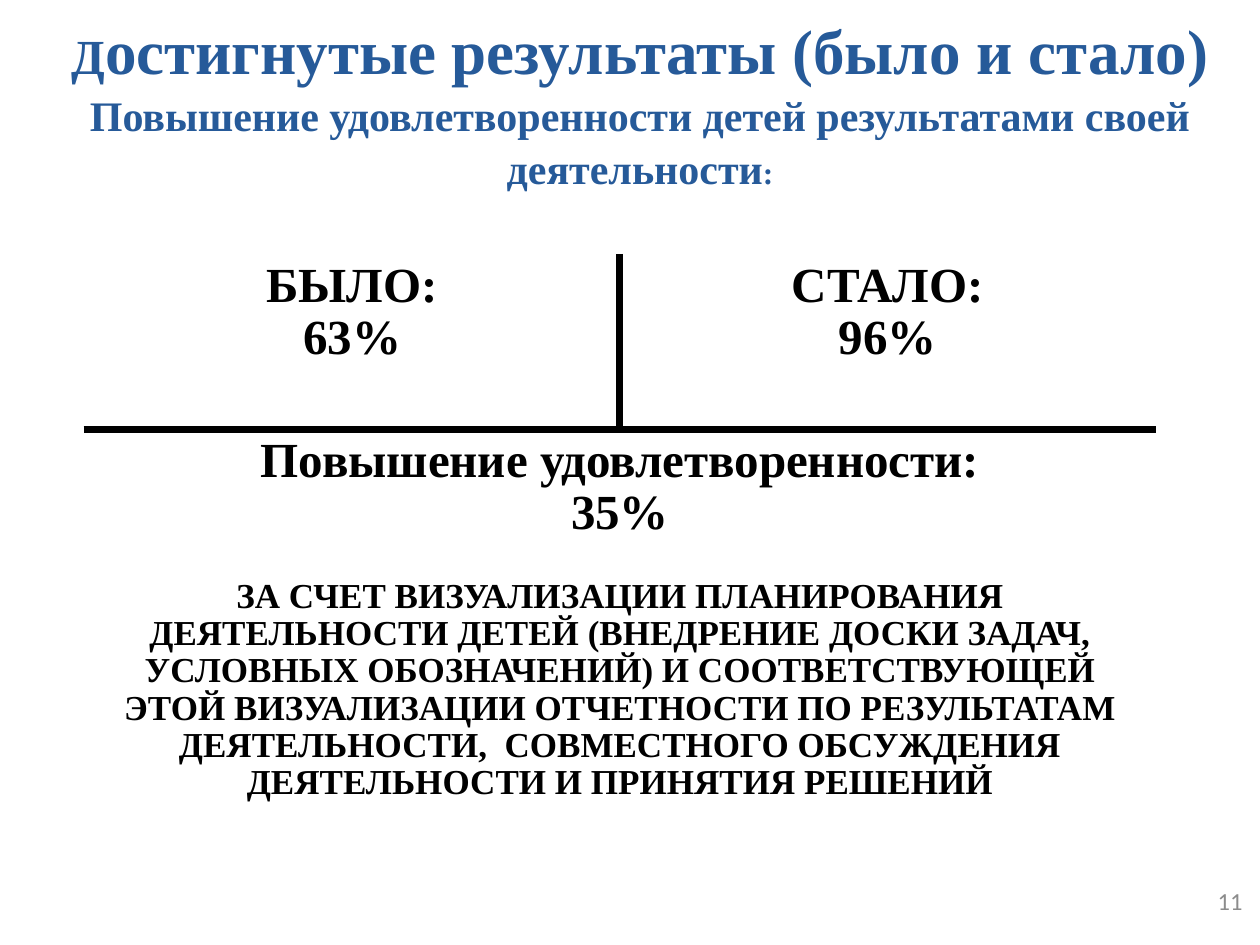
from pptx import Presentation
from pptx.dml.color import RGBColor
from pptx.enum.text import MSO_ANCHOR as ANCHOR, MSO_AUTO_SIZE as AUTOSIZE, PP_ALIGN as ALIGN
from pptx.oxml import parse_xml
from pptx.oxml.ns import nsdecls
from pptx.util import Inches, Pt

BLUE = RGBColor(0x26, 0x5A, 0x99)
BLACK = RGBColor(0, 0, 0)
WHITE = RGBColor(0xFF, 0xFF, 0xFF)
GRAY = RGBColor(0x8C, 0x8C, 0x8C)
SERIF = "Times New Roman"
THICK, THIN = (BLACK, 4.5), (WHITE, 1)

REASON = (
    "ЗА СЧЕТ ВИЗУАЛИЗАЦИИ ПЛАНИРОВАНИЯ ДЕЯТЕЛЬНОСТИ ДЕТЕЙ (ВНЕДРЕНИЕ ДОСКИ ЗАДАЧ, "
    "УСЛОВНЫХ ОБОЗНАЧЕНИЙ) И СООТВЕТСТВУЮЩЕЙ ЭТОЙ ВИЗУАЛИЗАЦИИ ОТЧЕТНОСТИ ПО "
    "РЕЗУЛЬТАТАМ ДЕЯТЕЛЬНОСТИ,  СОВМЕСТНОГО ОБСУЖДЕНИЯ ДЕЯТЕЛЬНОСТИ И ПРИНЯТИЯ РЕШЕНИЙ"
)


def set_font(font, name, size, color, bold=False):
    font.name, font.size, font.bold = name, Pt(size), bold
    font.color.rgb = color


def add_title(s):
    sp = s.shapes.title
    sp.left, sp.top, sp.width, sp.height = map(Inches, (0.35, 0.36, 9.46, 0.87))
    tf = sp.text_frame
    tf.auto_size, tf.vertical_anchor = AUTOSIZE.NONE, ANCHOR.MIDDLE
    p = tf.paragraphs[0]
    p.alignment, p.line_spacing = ALIGN.CENTER, 1.05

    def add_run(text, size):
        r = p.add_run()
        r.text = text
        set_font(r.font, SERIF, size, BLUE, True)

    add_run("Д", 28)
    add_run("остигнутые результаты (было и стало)", 36)
    p.add_line_break()
    add_run("Повышение удовлетворенности детей результатами своей деятельности", 24)
    add_run(":", 18)


def add_slide_number(s, number):
    tf = s.shapes.add_textbox(*map(Inches, (7.63, 6.95, 2.33, 0.4))).text_frame
    tf.word_wrap, tf.vertical_anchor = True, ANCHOR.MIDDLE
    p = tf.paragraphs[0]
    p.text, p.alignment = number, ALIGN.RIGHT
    set_font(p.font, "Calibri", 14, GRAY)


def set_borders(cell, left=THIN, right=THIN, top=THIN, bottom=THIN):
    cell.fill.background()
    tcPr = cell._tc.get_or_add_tcPr()
    for i, (side, (color, width)) in enumerate(zip("LRTB", (left, right, top, bottom))):
        tcPr.insert(i, parse_xml(
            f'<a:ln{side} {nsdecls("a")} w="{Pt(width)}"><a:solidFill>'
            f'<a:srgbClr val="{color}"/></a:solidFill></a:ln{side}>'))


def fill_cell(cell, *lines):
    """Each line is a text, its size and the space before it."""
    tf = cell.text_frame
    for i, (text, size, space) in enumerate(lines):
        p = tf.add_paragraph() if i else tf.paragraphs[0]
        p.text, p.alignment = text, ALIGN.CENTER
        p.line_spacing, p.space_before = 0.96, Pt(space)
        set_font(p.font, SERIF, size, BLACK, True)


def add_results(s):
    frame = s.shapes.add_table(2, 2, *map(Inches, (0.67, 2.02, 8.5, 4.87)))
    table = frame.table
    table.first_row = table.horz_banding = False
    for row, height in zip(table.rows, (1.39, 3.48)):
        row.height = Inches(height)

    # Before and after
    before, after = table.cell(0, 0), table.cell(0, 1)
    fill_cell(before, ("БЫЛО:", 28, 0), ("63%", 28, 0))
    fill_cell(after, ("СТАЛО:", 28, 0), ("96%", 28, 0))
    set_borders(before, right=THICK, bottom=THICK)
    set_borders(after, left=THICK, bottom=THICK)

    # Growth and its reason across both columns
    growth, spanned = table.cell(1, 0), table.cell(1, 1)
    growth.merge(spanned)
    fill_cell(growth, ("Повышение удовлетворенности:", 28, 0), ("35%", 28, 0), (REASON, 20, 22))
    for cell in (growth, spanned):
        set_borders(cell, top=THICK)


def main():
    prs = Presentation()
    prs.slide_width, prs.slide_height = Inches(10), Inches(7.5)
    s = prs.slides.add_slide(prs.slide_layouts[5])
    add_title(s)
    add_slide_number(s, "11")
    add_results(s)
    prs.save("out.pptx")


if __name__ == "__main__":
    main()
